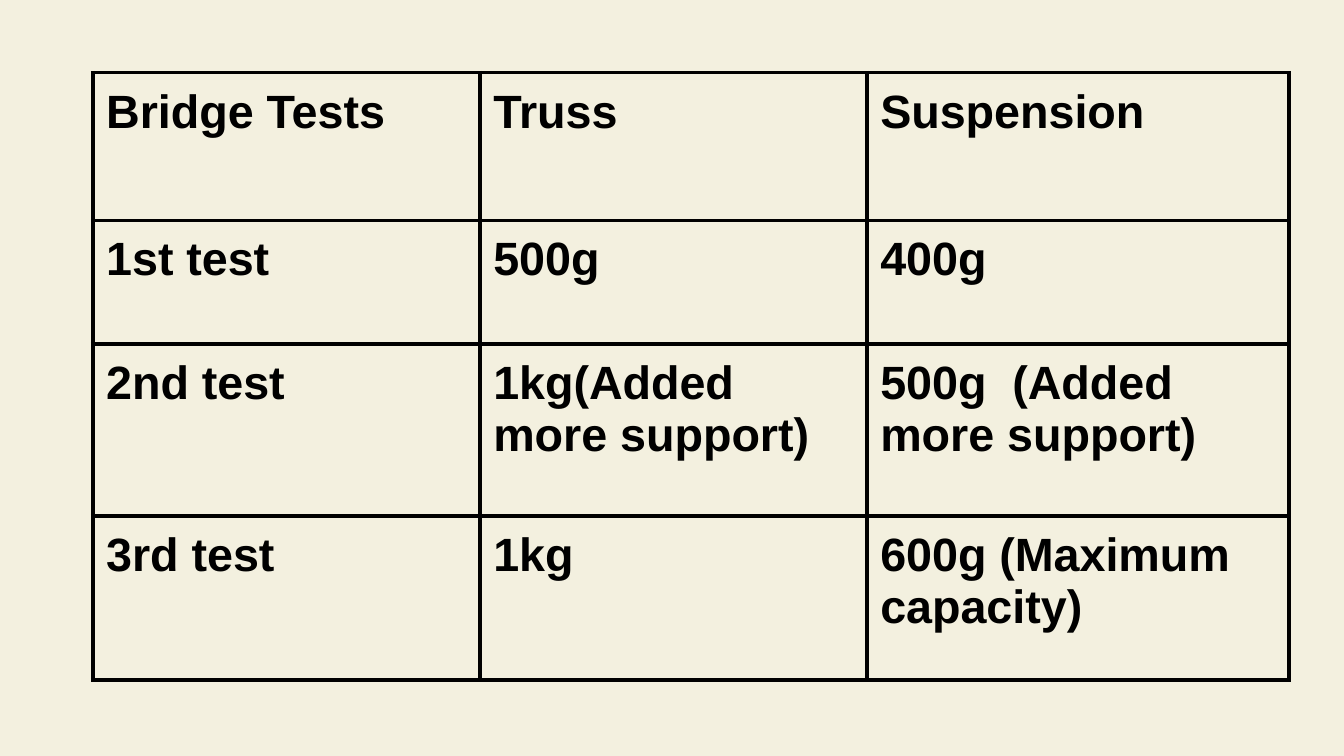
from dataclasses import dataclass

from lxml.etree import SubElement
from pptx import Presentation
from pptx.dml.color import RGBColor
from pptx.oxml.ns import qn
from pptx.util import Inches, Pt


@dataclass(frozen=True)
class Theme:
    background: str = "F3F0DF"
    ink: str = "000000"
    font: str = "Arial"
    text_size: float = 25
    border_width: float = 2.25
    cell_margin: float = 0.1


THEME = Theme()
BRIDGE_TESTS = [
    ["Bridge Tests", "Truss", "Suspension"],
    ["1st test", "500g", "400g"],
    ["2nd test", "1kg(Added more support)", "500g  (Added more support)"],
    ["3rd test", "1kg", "600g (Maximum capacity)"],
]
COLUMN_WIDTHS = [2.88, 2.88, 3.14]
ROW_HEIGHTS = [1.1, 0.92, 1.28, 1.22]


def set_background(slide):
    fill = slide.background.fill
    fill.solid()
    fill.fore_color.rgb = RGBColor.from_string(THEME.background)


def add_borders(cell):
    properties = cell._tc.get_or_add_tcPr()
    for position, side in enumerate(("lnL", "lnR", "lnT", "lnB")):
        border = properties.makeelement(qn(f"a:{side}"), {"w": str(Pt(THEME.border_width))})
        properties.insert(position, border)
        line_fill = SubElement(border, qn("a:solidFill"))
        SubElement(line_fill, qn("a:srgbClr"), val=THEME.ink)


def write_cell(cell, wording):
    for side in ("left", "right", "top", "bottom"):
        setattr(cell, f"margin_{side}", Inches(THEME.cell_margin))
    cell.fill.background()
    add_borders(cell)
    run = cell.text_frame.paragraphs[0].add_run()
    run.text = wording
    text_format = {"name": THEME.font, "size": Pt(THEME.text_size), "bold": True}
    for attribute, value in text_format.items():
        setattr(run.font, attribute, value)
    run.font.color.rgb = RGBColor.from_string(THEME.ink)


def add_results_table(slide, left, top):
    results = slide.shapes.add_table(
        len(ROW_HEIGHTS), len(COLUMN_WIDTHS), Inches(left), Inches(top),
        Inches(sum(COLUMN_WIDTHS)), Inches(sum(ROW_HEIGHTS)),
    ).table
    results.first_row = False
    results.horz_banding = False
    for column, width in zip(results.columns, COLUMN_WIDTHS):
        column.width = Inches(width)
    for row, height, wordings in zip(results.rows, ROW_HEIGHTS, BRIDGE_TESTS):
        row.height = Inches(height)
        for cell, wording in zip(row.cells, wordings):
            write_cell(cell, wording)


def main():
    presentation = Presentation()
    presentation.slide_width = Inches(10)
    presentation.slide_height = Inches(10 * 9 / 16)
    blank_layout = presentation.slide_layouts[6]
    slide = presentation.slides.add_slide(blank_layout)
    set_background(slide)
    add_results_table(slide, left=0.69, top=0.54)
    presentation.save("out.pptx")


if __name__ == "__main__":
    main()
